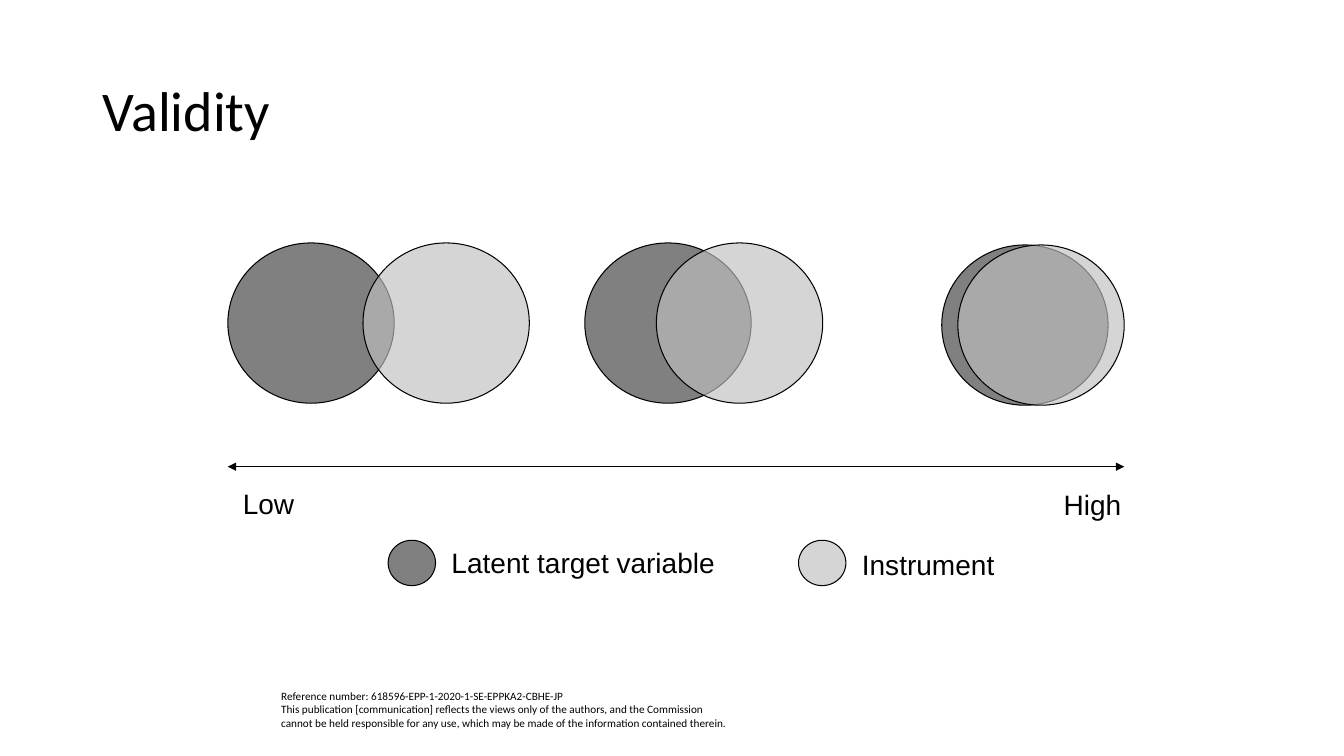
from lxml import etree
from pptx import Presentation
from pptx import util as u
from pptx.dml.color import RGBColor
from pptx.enum import shapes, text
from pptx.oxml.ns import qn

PX = 9144  # 100 px to the inch
COLORS = {"ink": "000000", "latent": "808080", "instrument": "C0C0C0"}
OPACITY = {"latent": 100, "instrument": 65}

TITLE = "Validity"
REFERENCE = (
    "Reference number: 618596-EPP-1-2020-1-SE-EPPKA2-CBHE-JP\v"
    "This publication [communication] reflects the views only of the authors, "
    "and the Commission cannot be held responsible for any use, "
    "which may be made of the information contained therein."
)
CIRCLE = (165, 159)
DOT = (47, 45)
# left of the latent circle, shift of the instrument circle, top
OVERLAPS = [(226, 134, 241), (580, 71, 241), (934, 16, 243)]
SCALE = (226, 1115, 463)  # left end, right end, height
# words, left, top, width
SCALE_ENDS = [("Low", 231, 478, 72), ("High", 1045, 479, 78)]
# measure, dot left, dot top, words, words left, words top, words width
LEGEND = [
    ("latent", 385, 536, "Latent target variable", 438, 536, 283),
    ("instrument", 792, 536, "Instrument", 845, 538, 152),
]
LABEL_HEIGHT = 44

prs = Presentation()
prs.slide_width, prs.slide_height = 1333 * PX, 750 * PX
slide = prs.slides.add_slide(prs.slide_layouts[6])


def px(*lengths):
    return [length * PX for length in lengths]


def add_words(words, box, size, font="Arial", wrap=False):
    frame = slide.shapes.add_textbox(*px(*box)).text_frame
    frame.word_wrap = wrap
    paragraph = frame.paragraphs[0]
    paragraph.text = words
    paragraph.font.size = u.Pt(size)
    paragraph.font.name = font
    paragraph.font.color.rgb = RGBColor.from_string(COLORS["ink"])
    return frame


def style_line(line):
    line.color.rgb = RGBColor.from_string(COLORS["ink"])
    line.width = u.Pt(0.75)


def add_circle(measure, left, top, size):
    circle = slide.shapes.add_shape(
        shapes.MSO_SHAPE.OVAL, *px(left, top, *size))
    circle.shadow.inherit = False
    circle.fill.solid()
    circle.fill.fore_color.rgb = RGBColor.from_string(COLORS[measure])
    if OPACITY[measure] < 100:
        color = circle.fill._xPr.find(qn("a:solidFill"))[0]
        etree.SubElement(color, qn("a:alpha"), val=str(OPACITY[measure] * 1000))
    style_line(circle.line)


def add_scale(left, right, y):
    """Draw the axis with an arrowhead at both ends."""
    axis = slide.shapes.add_connector(
        shapes.MSO_CONNECTOR.STRAIGHT, *px(left, y, right, y))
    style_line(axis.line)
    properties = axis._element.spPr
    outline = properties.find(qn("a:ln"))
    for end in ("a:headEnd", "a:tailEnd"):
        etree.SubElement(outline, qn(end), type="triangle")
    etree.SubElement(properties, qn("a:effectLst"))


add_words(REFERENCE, (269, 679, 464, 50), 8, "Calibri", wrap=True)
title = add_words(TITLE, (92, 40, 1150, 145), 40, "Calibri", wrap=True)
title.vertical_anchor = text.MSO_ANCHOR.MIDDLE
title.paragraphs[0].line_spacing = 0.9

add_scale(*SCALE)
for words, left, top, width in SCALE_ENDS:
    add_words(words, (left, top, width, LABEL_HEIGHT), 20)

for left, shift, top in OVERLAPS:
    add_circle("latent", left, top, CIRCLE)
    add_circle("instrument", left + shift, top, CIRCLE)

for measure, dot_left, dot_top, words, left, top, width in LEGEND:
    add_circle(measure, dot_left, dot_top, DOT)
    add_words(words, (left, top, width, LABEL_HEIGHT), 20)

prs.save("out.pptx")
